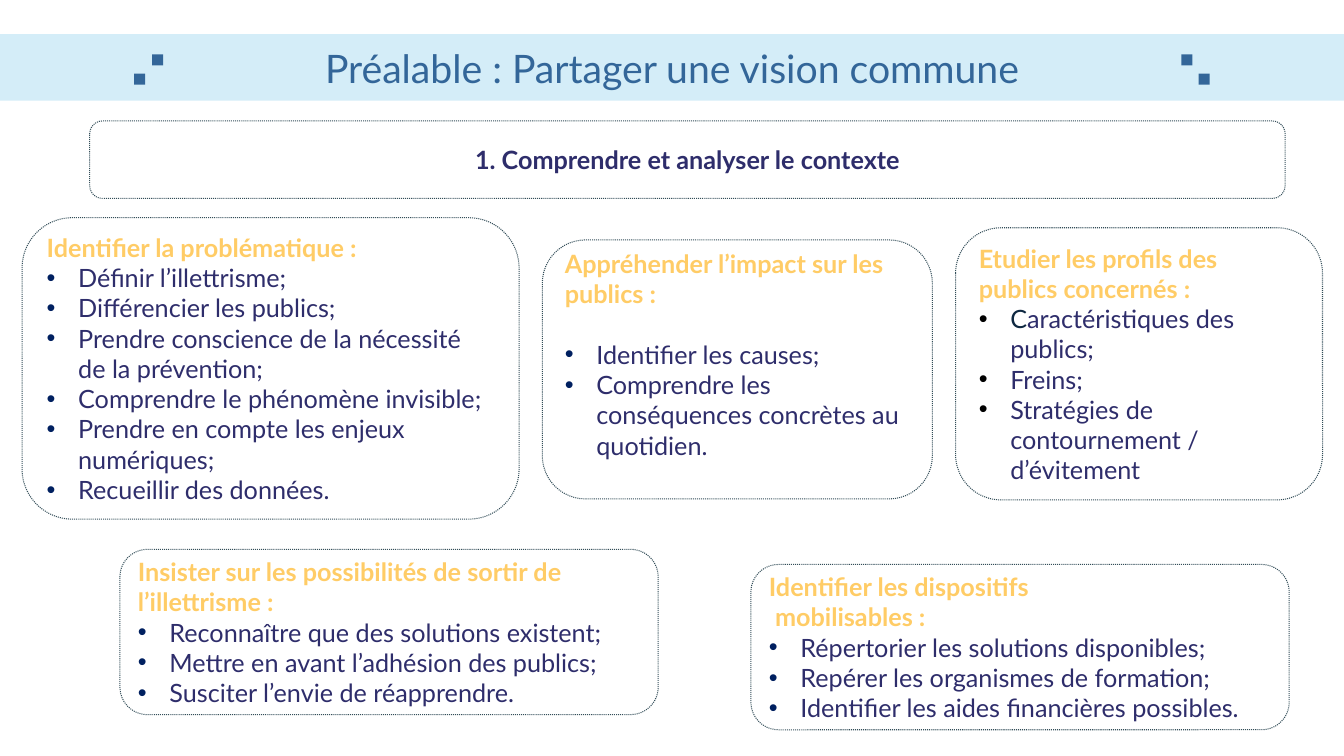
from dataclasses import dataclass

import lxml.etree
import pptx
import pptx.dml.color
import pptx.enum.dml
import pptx.enum.shapes
import pptx.enum.text
import pptx.oxml.ns
import pptx.util

Pt = pptx.util.Pt
RGBColor = pptx.dml.color.RGBColor
Shapes = pptx.enum.shapes.MSO_SHAPE
Align = pptx.enum.text.PP_ALIGN
qn = pptx.oxml.ns.qn

PALE_BLUE = RGBColor(0xD4, 0xED, 0xF8)
BLUE = RGBColor(0x33, 0x66, 0x99)
OUTLINE = RGBColor(0x08, 0x28, 0x36)
INDIGO = RGBColor(0x2E, 0x2D, 0x6B)
NAVY = RGBColor(0x00, 0x20, 0x60)
DARK_NAVY = RGBColor(0x0E, 0x28, 0x41)
YELLOW = RGBColor(0xFF, 0xCC, 0x66)
BLACK = RGBColor(0x00, 0x00, 0x00)

FONT = "Lato"
BODY_SIZE = 18
LINE_HEIGHT = 21.6
BULLET_INDENT = 22.5
SQUARE_SIDE = 7.9
OUTLINE_OPACITY = 82


@dataclass(frozen=True)
class Frame:
    left: float
    top: float
    width: float
    height: float


@dataclass(frozen=True)
class Card:
    frame: Frame
    heading: tuple[str, ...]
    bullets: tuple[str, ...]
    bullet_color: RGBColor = NAVY
    initial_color: RGBColor = INDIGO
    heading_gap: float = 0
    bottom_gap: float = 0


CARDS = (
    Card(
        Frame(682.6, 162.7, 262.1, 194.4),
        ("Etudier les profils des publics concernés :",),
        ("Caractéristiques des publics;", "Freins;", "Stratégies de contournement / d’évitement"),
        bullet_color=BLACK,
        initial_color=DARK_NAVY,
    ),
    Card(
        Frame(85.7, 392.4, 384.5, 118.1),
        ("Insister sur les possibilités de sortir de l’illettrisme :",),
        (
            "Reconnaître que des solutions existent;",
            "Mettre en avant l’adhésion des publics;",
            "Susciter l’envie de réapprendre.",
        ),
    ),
    Card(
        Frame(536.4, 403.2, 384.5, 118.1),
        ("Identifier les dispositifs", " mobilisables :"),
        (
            "Répertorier les solutions disponibles;",
            "Repérer les organismes de formation;",
            "Identifier les aides financières possibles.",
        ),
    ),
    Card(
        Frame(15.8, 155.5, 355, 215.3),
        ("Identifier la problématique :",),
        (
            "Définir l’illettrisme;",
            "Différencier les publics;",
            "Prendre conscience de la nécessité de la prévention;",
            "Comprendre le phénomène invisible;",
            "Prendre en compte les enjeux numériques;",
            "Recueillir des données.",
        ),
    ),
    Card(
        Frame(387.4, 171.4, 278.6, 185),
        ("Appréhender l’impact sur les publics :",),
        ("Identifier les causes;", "Comprendre les conséquences concrètes au quotidien."),
        heading_gap=LINE_HEIGHT,
        bottom_gap=LINE_HEIGHT,
    ),
)
SQUARES = ((108.7, 38.9), (95.8, 52.6), (843.8, 38.9), (856.1, 52.6))


def add_box(page: pptx.slide.Slide, kind: Shapes, frame: Frame) -> pptx.shapes.autoshape.Shape:
    box = page.shapes.add_shape(
        kind, Pt(frame.left), Pt(frame.top), Pt(frame.width), Pt(frame.height)
    )
    box.shadow.inherit = False
    box.text_frame.word_wrap = True
    box.text_frame.vertical_anchor = pptx.enum.text.MSO_ANCHOR.MIDDLE
    return box


def add_filled(page: pptx.slide.Slide, frame: Frame, color: RGBColor) -> pptx.shapes.autoshape.Shape:
    box = add_box(page, Shapes.RECTANGLE, frame)
    box.fill.solid()
    box.fill.fore_color.rgb = color
    box.line.fill.background()
    return box


def add_outlined(page: pptx.slide.Slide, frame: Frame) -> pptx.shapes.autoshape.Shape:
    box = add_box(page, Shapes.ROUNDED_RECTANGLE, frame)
    box.fill.background()
    box.line.width = Pt(0.75)
    box.line.color.rgb = OUTLINE
    box.line.dash_style = pptx.enum.dml.MSO_LINE.ROUND_DOT
    color = next(box.line._ln.iter(qn("a:srgbClr")))
    lxml.etree.SubElement(color, qn("a:alpha"), val=str(OUTLINE_OPACITY * 1000))
    return box


def style(
    para: pptx.text.text._Paragraph,
    color: RGBColor,
    size: float = BODY_SIZE,
    bold: bool = False,
    align: Align = Align.LEFT,
) -> None:
    para.alignment = align
    for span in para.runs:
        span.font.name = FONT
        span.font.size = Pt(size)
        span.font.bold = bold
        span.font.color.rgb = color


def add_bullet(para: pptx.text.text._Paragraph, color: RGBColor) -> None:
    properties = para._p.get_or_add_pPr()
    properties.set("marL", str(Pt(BULLET_INDENT)))
    properties.set("indent", str(-Pt(BULLET_INDENT)))
    bullet_color = lxml.etree.SubElement(properties, qn("a:buClr"))
    lxml.etree.SubElement(bullet_color, qn("a:srgbClr"), val=str(color))
    lxml.etree.SubElement(properties, qn("a:buFont"), typeface="Arial")
    lxml.etree.SubElement(properties, qn("a:buChar"), char="•")


def add_card(page: pptx.slide.Slide, card: Card) -> None:
    text_frame = add_outlined(page, card.frame).text_frame
    text_frame.margin_bottom = Pt(3.6 + card.bottom_gap)
    text_frame.text = "\n".join(card.heading + card.bullets)
    headings = text_frame.paragraphs[: len(card.heading)]
    bullets = text_frame.paragraphs[len(card.heading) :]
    for para in headings:
        style(para, YELLOW, bold=True)
    if card.heading_gap:
        headings[-1].space_after = Pt(card.heading_gap)
    if card.initial_color != INDIGO:
        bullets[0].text = card.bullets[0][0]
        bullets[0].add_run().text = card.bullets[0][1:]
    for para in bullets:
        style(para, INDIGO)
        add_bullet(para, card.bullet_color)
    bullets[0].runs[0].font.color.rgb = (
        card.initial_color if len(bullets[0].runs) > 1 else INDIGO
    )


def main() -> None:
    deck = pptx.Presentation()
    deck.slide_width, deck.slide_height = Pt(960), Pt(540)
    page = deck.slides.add_slide(deck.slide_layouts[6])

    banner = add_filled(page, Frame(0, 24.5, 960, 47.5), PALE_BLUE)
    banner.text_frame.text = "Préalable : Partager une vision commune"
    style(banner.text_frame.paragraphs[0], BLUE, size=28, align=Align.CENTER)
    for left, top in SQUARES:
        add_filled(page, Frame(left, top, SQUARE_SIDE, SQUARE_SIDE), BLUE)

    context = add_outlined(page, Frame(64.1, 86.4, 853.9, 55.4))
    context.text_frame.text = "1. Comprendre et analyser le contexte"
    style(context.text_frame.paragraphs[0], INDIGO, bold=True, align=Align.CENTER)
    for card in CARDS:
        add_card(page, card)

    deck.save("out.pptx")


if __name__ == "__main__":
    main()
